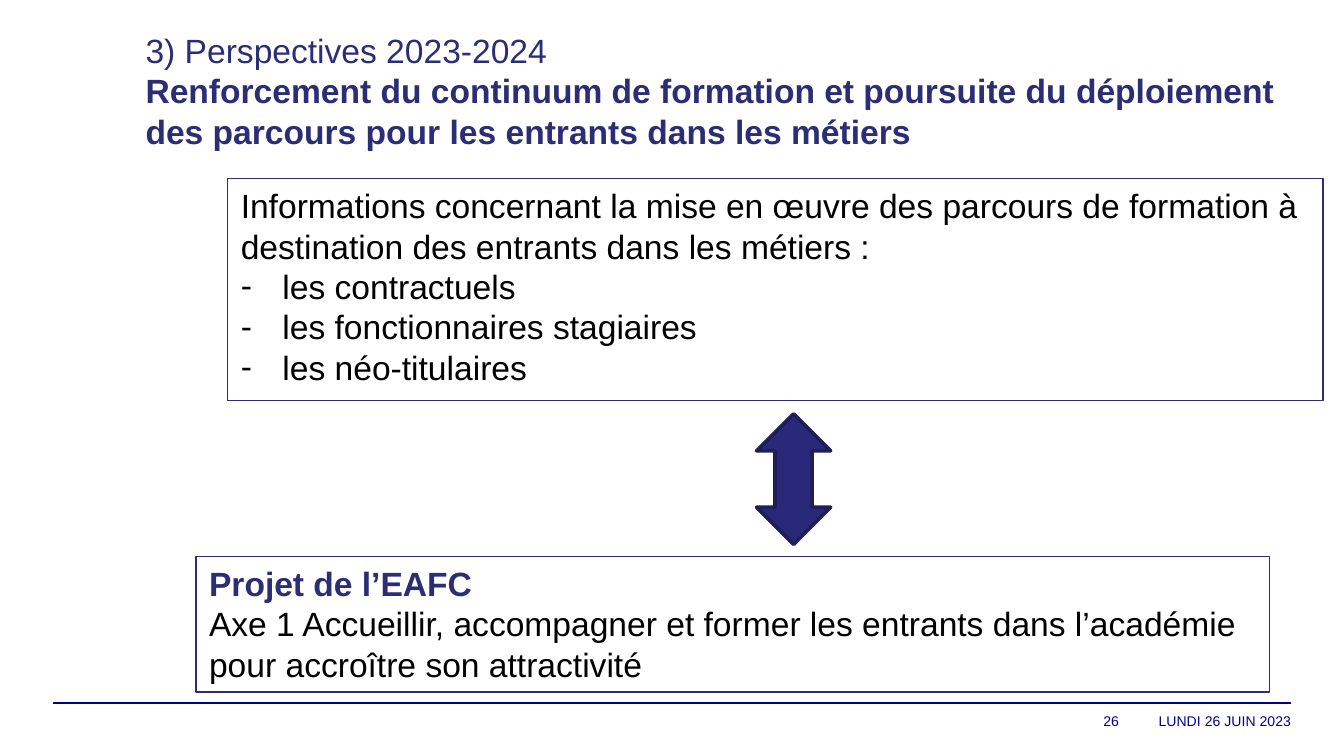
"""Build the slide on the 2023-2024 outlook for newcomer training."""
from lxml.etree import SubElement
from pptx import Presentation
from pptx.dml.color import RGBColor
from pptx.enum.shapes import MSO_CONNECTOR as Connector, MSO_SHAPE as Shape
from pptx.enum.text import MSO_ANCHOR as Anchor, MSO_AUTO_SIZE as AutoSize, PP_ALIGN as Align
from pptx.oxml.ns import qn
from pptx.util import Inches, Pt

COLOURS = {
    "footer": "000091",
    "heading": "2B2E75",
    "body": "000000",
    "arrow": "2A2879",
    "arrow_edge": "1F1E5A",
}


def colour(name):
    return RGBColor.from_string(COLOURS[name])


def write(frame, text, size=18, tint="body", bold=False, align=Align.LEFT, bullet=None):
    paragraph = frame.paragraphs[-1] if not frame.text else frame.add_paragraph()
    paragraph.alignment = align
    if bullet:
        properties = paragraph._p.get_or_add_pPr()
        properties.set("marL", str(Inches(0.31)))
        properties.set("indent", str(-Inches(0.31)))
        SubElement(properties, qn("a:buFont"), typeface="Arial")
        SubElement(properties, qn("a:buChar"), char=bullet)
    run = paragraph.add_run()
    run.text = text
    run.font.name = "Arial"
    run.font.size = Pt(size)
    run.font.bold = bold
    run.font.color.rgb = colour(tint)


presentation = Presentation()
presentation.slide_width = Inches(10)
presentation.slide_height = presentation.slide_width * 9 // 16
column = presentation.slide_width / 100
row = presentation.slide_height / 56.25
slide = presentation.slides.add_slide(presentation.slide_layouts[5])

rule = slide.shapes.add_connector(
    Connector.STRAIGHT, int(3.94 * column), int(52.3 * row), int(96.06 * column), int(52.3 * row)
)
rule.line.color.rgb = colour("footer")
rule.line.width = Pt(0.8)
SubElement(rule._element.spPr, qn("a:effectLst"))

for text, left, width in [("LUNDI 26 JUIN 2023", 83.3, 12.76), ("26", 68.5, 14.76)]:
    footer = slide.shapes.add_textbox(
        int(left * column), int(52.35 * row), int(width * column), int(2.6 * row)
    )
    frame = footer.text_frame
    frame.word_wrap = True
    frame.vertical_anchor = Anchor.MIDDLE
    frame.margin_left = frame.margin_right = frame.margin_top = frame.margin_bottom = 0
    write(frame, text, size=7.5, tint="footer", align=Align.RIGHT)

title = slide.shapes.title
title.left, title.top = int(9.83 * column), int(1.72 * row)
title.width, title.height = int(86.2 * column), int(10.1 * row)
frame = title.text_frame
frame.word_wrap = True
frame.auto_size = AutoSize.NONE
frame.vertical_anchor = Anchor.TOP
write(frame, "3) Perspectives 2023-2024", tint="heading")
write(
    frame,
    "Renforcement du continuum de formation et poursuite du déploiement "
    "des parcours pour les entrants dans les métiers",
    tint="heading",
    bold=True,
)

information = [
    (
        "Informations concernant la mise en œuvre des parcours de formation à "
        "destination des entrants dans les métiers :",
        {},
    ),
    ("les contractuels", {"bullet": "-"}),
    ("les fonctionnaires stagiaires", {"bullet": "-"}),
    ("les néo-titulaires", {"bullet": "-"}),
]
project = [
    ("Projet de l’EAFC", {"tint": "heading", "bold": True}),
    (
        "Axe 1 Accueillir, accompagner et former les entrants dans l’académie "
        "pour accroître son attractivité",
        {},
    ),
]
for lines, left, top, width, height in [
    (information, 16.93, 13.3, 81.5, 16.5),
    (project, 14.57, 41.4, 79.9, 10.1),
]:
    panel = slide.shapes.add_shape(
        Shape.RECTANGLE, int(left * column), int(top * row), int(width * column), int(height * row)
    )
    panel.shadow.inherit = False
    panel.fill.background()
    panel.line.color.rgb = colour("heading")
    panel.line.width = Pt(0.75)
    panel.text_frame.word_wrap = True
    panel.text_frame.vertical_anchor = Anchor.TOP
    for text, style in lines:
        write(panel.text_frame, text, **style)

arrow = slide.shapes.add_shape(
    Shape.UP_DOWN_ARROW, int(56.3 * column), int(30.8 * row), int(5.5 * column), int(9.7 * row)
)
arrow.shadow.inherit = False
arrow.fill.solid()
arrow.fill.fore_color.rgb = colour("arrow")
arrow.line.color.rgb = colour("arrow_edge")
arrow.line.width = Pt(2)

presentation.save("out.pptx")
